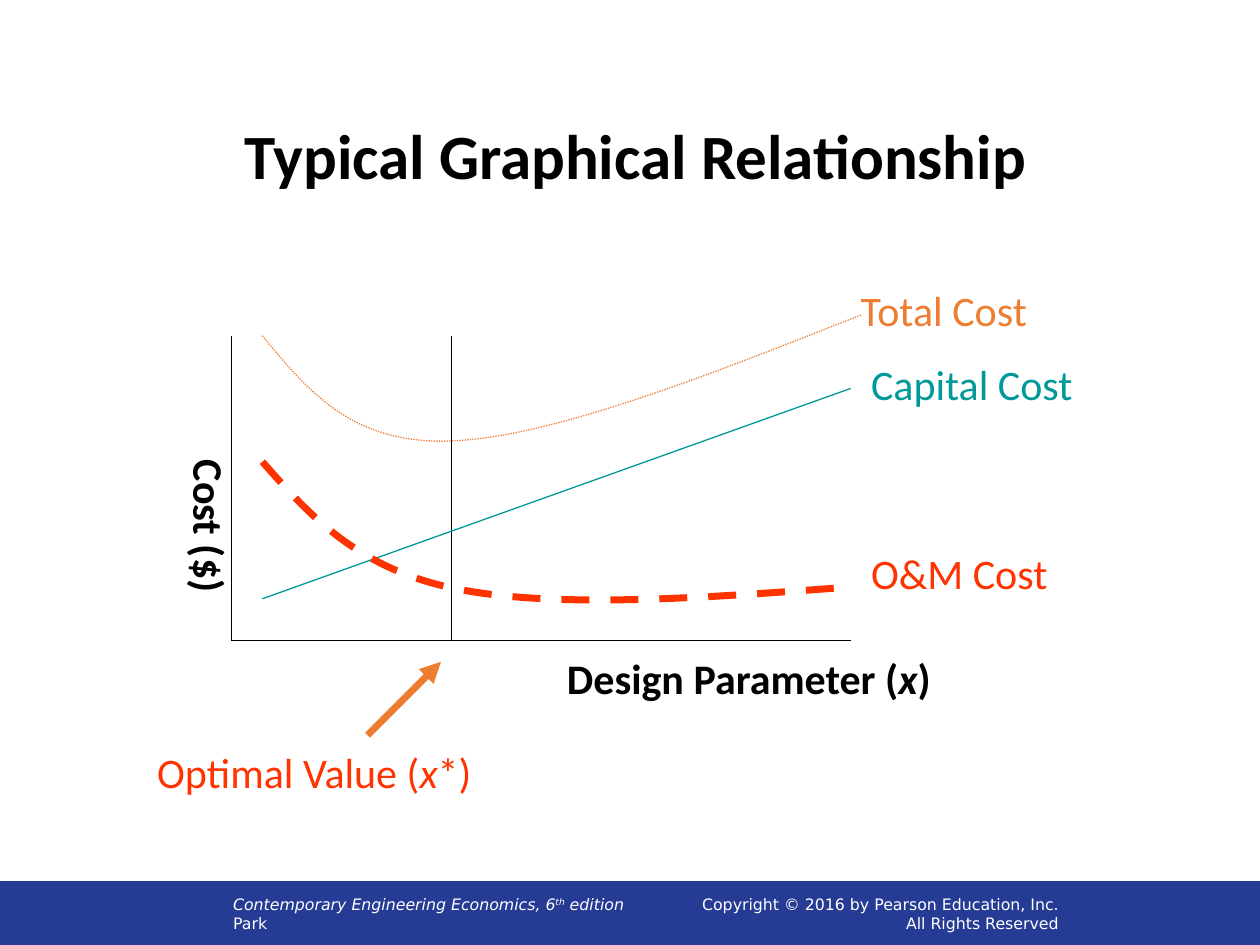
from lxml import etree
from pptx import Presentation
from pptx.dml.color import RGBColor
from pptx.enum.dml import MSO_LINE
from pptx.enum.shapes import MSO_CONNECTOR, MSO_SHAPE
from pptx.enum.text import MSO_ANCHOR, MSO_AUTO_SIZE, PP_ALIGN
from pptx.oxml.ns import qn
from pptx.util import Cm, Pt

STRAIGHT = MSO_CONNECTOR.STRAIGHT
RECTANGLE = MSO_SHAPE.RECTANGLE
DOTTED, DASHED = MSO_LINE.ROUND_DOT, MSO_LINE.DASH
TOP, MIDDLE = MSO_ANCHOR.TOP, MSO_ANCHOR.MIDDLE
LEFT, CENTER, RIGHT = PP_ALIGN.LEFT, PP_ALIGN.CENTER, PP_ALIGN.RIGHT
NO_FIT, GROW = MSO_AUTO_SIZE.NONE, MSO_AUTO_SIZE.SHAPE_TO_FIT_TEXT

BLACK, WHITE, NAVY = "000000", "FFFFFF", "263B94"
ORANGE, RED, TEAL = "ED7D31", "FF3300", "009999"

AXIS_LEFT, AXIS_RIGHT, AXIS_TOP, AXIS_BOTTOM = 4.66, 17.15, 6.77, 12.91
CURVE_LEFT, OPTIMUM = 5.29, 9.1
FOOTER_TOP, FOOTER_HEIGHT = 17.78, 1.27
LABEL_HEIGHT = 1.27

TITLE = [[("Typical Graphical Relationship", "b")]]
FOOTERS = [
    (4.45, 15.65, LEFT, [
        [("Contemporary Engineering Economics, 6", "i"), ("th", "i^"), (" edition", "i")],
        [("Park", "")],
    ]),
    (12.5, 9.09, RIGHT, [
        [("Copyright © 2016 by Pearson Education, Inc.", "")],
        [("All Rights Reserved", "")],
    ]),
]
LINES = [
    ((AXIS_LEFT, AXIS_TOP), (AXIS_LEFT, AXIS_BOTTOM), BLACK, 0.75, False),
    ((AXIS_LEFT, AXIS_BOTTOM), (AXIS_RIGHT, AXIS_BOTTOM), BLACK, 0.75, False),
    ((OPTIMUM, AXIS_TOP), (OPTIMUM, AXIS_BOTTOM), BLACK, 0.75, False),
    ((CURVE_LEFT, 12.07), (AXIS_RIGHT, 7.83), TEAL, 0.75, False),
    ((7.41, 14.82), (8.89, 13.34), ORANGE, 4, True),
]
CURVES = [
    ([(CURVE_LEFT, AXIS_TOP), (6.2, 7.87), (7.09, 8.97), (OPTIMUM, 8.89),
      (11.13, 8.81), (14.22, 7.59), (17.36, 6.35)], ORANGE, 0.75, DOTTED),
    ([(CURVE_LEFT, 9.31), (6.22, 10.36), (7.16, 11.43), (OPTIMUM, 11.85),
      (11.05, 12.27), (14, 12.07), (16.93, 11.85)], RED, 4, DASHED),
]
LABELS = [
    (17.31, 10.92, 4.09, RED, [("O&M Cost", "")]),
    (17.31, 7.11, 4.72, TEAL, [("Capital Cost", "")]),
    (17.1, 5.61, 3.89, ORANGE, [("Total Cost", "")]),
    (11.18, 13.03, 8.23, BLACK, [("Design Parameter (", "b"), ("x", "bi"), (")", "b")]),
    (2.92, 14.93, 7.09, RED, [("Optimal Value (", ""), ("x", "i"), ("*)", "")]),
]
COST_AXIS = [[("Cost ($)", "b")]]


def color(value):
    return RGBColor.from_string(value)


def add_text(page, area, paragraphs, size, font, ink, align=LEFT, anchor=TOP, wrap=True, spacing=None):
    box = page.shapes.add_textbox(*map(Cm, area))
    frame = box.text_frame
    frame.word_wrap = wrap
    frame.auto_size = NO_FIT if wrap else GROW
    frame.vertical_anchor = anchor
    for index, spans in enumerate(paragraphs):
        para = frame.add_paragraph() if index else frame.paragraphs[0]
        para.alignment = align
        para.line_spacing = spacing
        for text, style in spans:
            span = para.add_run()
            span.text = text
            span.font.name = font
            span.font.size = Pt(size)
            span.font.color.rgb = color(ink)
            span.font.bold = "b" in style
            span.font.italic = "i" in style
            if "^" in style:
                span.font._element.set("baseline", "30000")
    return box


def add_line(page, start, end, ink, width, arrow):
    line = page.shapes.add_connector(STRAIGHT, *map(Cm, start + end))
    line.line.color.rgb = color(ink)
    line.line.width = Pt(width)
    if arrow:
        etree.SubElement(line.line._get_or_add_ln(), qn("a:tailEnd"), type="triangle")
    etree.SubElement(line._element.spPr, qn("a:effectLst"))


def bend_segments(curve):
    outline = next(curve._element.iter(qn("a:moveTo"))).getparent()
    segments = outline.findall(qn("a:lnTo"))
    for first in range(0, len(segments), 3):
        bend = etree.SubElement(outline, qn("a:cubicBezTo"))
        for segment in segments[first:first + 3]:
            bend.append(segment[0])
            outline.remove(segment)


def add_curve(page, points, ink, width, dash):
    start, *rest = [tuple(map(Cm, point)) for point in points]
    builder = page.shapes.build_freeform(*start)
    builder.add_line_segments(rest, close=False)
    curve = builder.convert_to_shape()
    bend_segments(curve)
    curve.shadow.inherit = False
    curve.fill.background()
    curve.line.color.rgb = color(ink)
    curve.line.width = Pt(width)
    curve.line.dash_style = dash


def main():
    deck = Presentation()
    deck.slide_width, deck.slide_height = Cm(25.4), Cm(19.05)
    page = deck.slides.add_slide(deck.slide_layouts[6])

    band = page.shapes.add_shape(RECTANGLE, 0, Cm(FOOTER_TOP), Cm(25.43), Cm(FOOTER_HEIGHT))
    band.shadow.inherit = False
    band.fill.solid()
    band.fill.fore_color.rgb = color(NAVY)
    band.line.color.rgb = color(NAVY)
    band.line.width = Pt(0.75)
    for left, width, align, paragraphs in FOOTERS:
        add_text(page, (left, FOOTER_TOP, width, FOOTER_HEIGHT), paragraphs,
                 9, "DejaVu Sans", WHITE, align, MIDDLE)

    add_text(page, (1.28, 1.96, 23.06, 2.49), TITLE, 36, "Calibri", BLACK, CENTER, MIDDLE, spacing=0.9)
    for line in LINES:
        add_line(page, *line)
    for curve in CURVES:
        add_curve(page, *curve)
    for left, top, width, ink, spans in LABELS:
        add_text(page, (left, top, width, LABEL_HEIGHT), [spans], 24, "Calibri", ink, wrap=False)
    cost = add_text(page, (3.32, 9.02, 1.55, 2.95), COST_AXIS, 24, "Calibri", BLACK, wrap=False)
    cost.text_frame._txBody.bodyPr.set("vert", "eaVert")

    deck.save("out.pptx")


if __name__ == "__main__":
    main()
